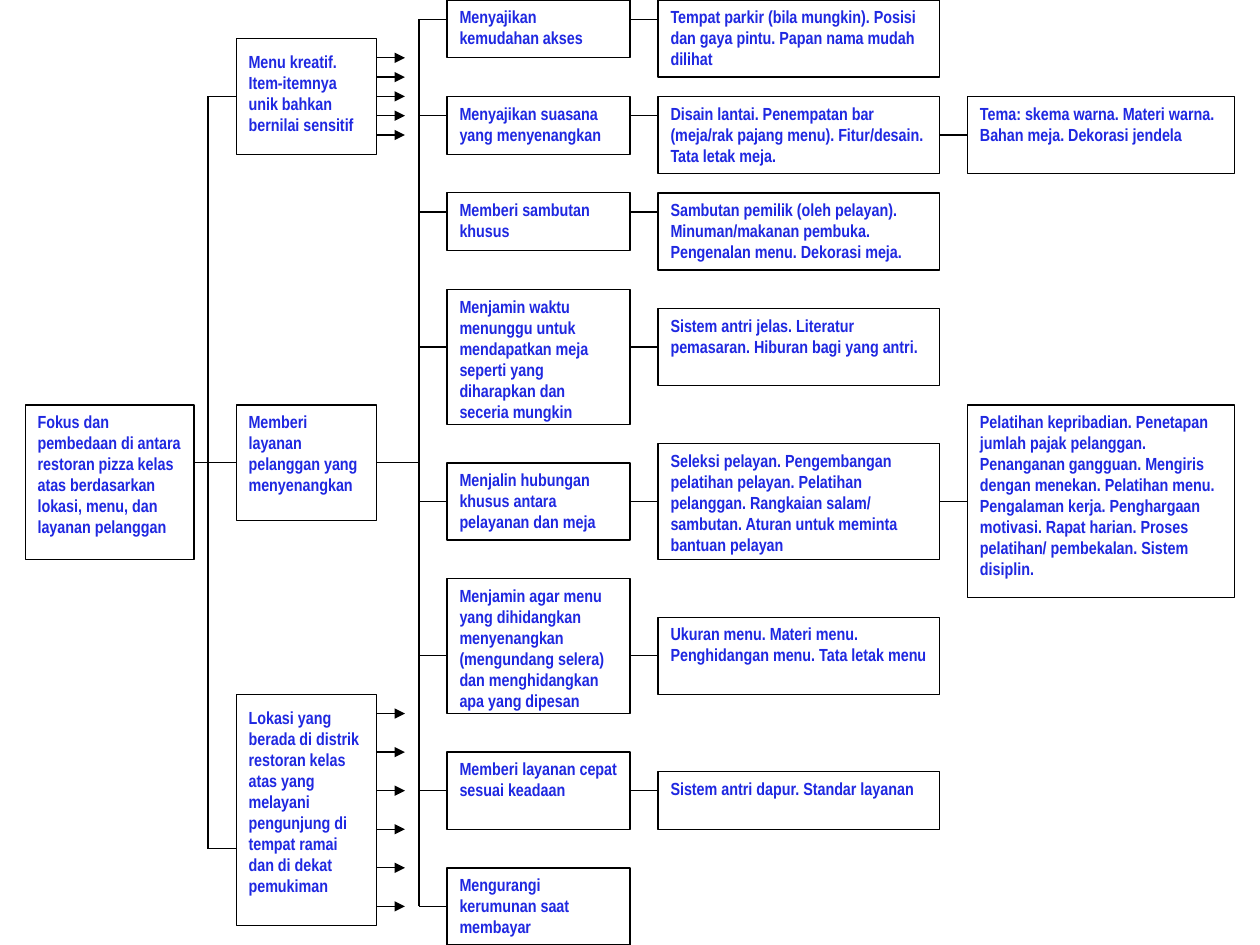
from lxml.etree import SubElement
from pptx import Presentation
from pptx.dml.color import RGBColor
from pptx.enum.shapes import MSO_CONNECTOR, MSO_SHAPE
from pptx.enum.text import MSO_ANCHOR, PP_ALIGN
from pptx.oxml.ns import qn
from pptx.util import Inches, Pt

COLORS = {"paper": "FFFFFF", "ink": "000000", "text": "1F28E1"}
FONT = "Arial Narrow"

# The chart stands on a grid of 86 columns and 49 rows.
LEFT, COLUMN, ROW = 0.2, 9.6 / 86, 7.5 / 49

# Left column and width of each level, in grid columns
FOCUS, PILLAR, SERVICE, DETAIL, EXTRA = (0, 12), (15, 10), (30, 13), (45, 20), (67, 19)
FOCUS_SPINE, SERVICE_SPINE, ARROW_END = 13, 28, 27
MIDDLE_ROW = 24

# Top row, rows, text, inset above the text, rows of the arrows
PILLARS = [
    (2, 6, "Menu kreatif. Item-itemnya unik bahkan bernilai sensitif", 0.1, range(3, 8)),
    (21, 6, "Memberi layanan pelanggan yang menyenangkan", 0.05, ()),
    (36, 12, "Lokasi yang berada di distrik restoran kelas atas yang melayani "
     "pengunjung di tempat ramai dan di dekat pemukiman", 0.1, range(37, 48, 2)),
]

# Row of the link, then top row, rows and text of the service and of its detail
SERVICES = [
    (1, (0, 3, "Menyajikan kemudahan akses"),
     (0, 4, "Tempat parkir (bila mungkin). Posisi dan gaya pintu. Papan nama mudah dilihat")),
    (6, (5, 3, "Menyajikan suasana yang menyenangkan"),
     (5, 4, "Disain lantai. Penempatan bar (meja/rak pajang menu). Fitur/desain. "
      "Tata letak meja.")),
    (11, (10, 3, "Memberi sambutan khusus"),
     (10, 4, "Sambutan pemilik (oleh pelayan). Minuman/makanan pembuka. "
      "Pengenalan menu. Dekorasi meja.")),
    (18, (15, 7, "Menjamin waktu menunggu untuk mendapatkan meja seperti yang "
          "diharapkan dan seceria mungkin"),
     (16, 4, "Sistem antri jelas. Literatur pemasaran. Hiburan bagi yang antri.")),
    (26, (24, 4, "Menjalin hubungan khusus antara pelayanan dan meja"),
     (23, 6, "Seleksi pelayan. Pengembangan pelatihan pelayan. Pelatihan pelanggan. "
      "Rangkaian salam/ sambutan. Aturan untuk meminta bantuan pelayan")),
    (34, (30, 7, "Menjamin agar menu yang dihidangkan menyenangkan (mengundang selera) "
          "dan menghidangkan apa yang dipesan"),
     (32, 4, "Ukuran menu. Materi menu. Penghidangan menu. Tata letak menu")),
    (41, (39, 4, "Memberi layanan cepat sesuai keadaan"),
     (40, 3, "Sistem antri dapur. Standar layanan")),
    (47, (45, 4, "Mengurangi kerumunan saat membayar"), None),
]

EXTRAS = [
    (7, (5, 4, "Tema: skema warna. Materi warna. Bahan meja. Dekorasi jendela")),
    (26, (21, 10, "Pelatihan kepribadian. Penetapan jumlah pajak pelanggan. "
          "Penanganan gangguan. Mengiris dengan menekan. Pelatihan menu. "
          "Pengalaman kerja. Penghargaan motivasi. Rapat harian. "
          "Proses pelatihan/ pembekalan. Sistem disiplin.")),
]


def color(name):
    return RGBColor.from_string(COLORS[name])


def across(column):
    return Inches(LEFT + column * COLUMN)


def down(row):
    return Inches(row * ROW)


def right_edge(level):
    return sum(level)


def add_box(page, level, top, rows, text, inset=0.05):
    column, columns = level
    box = page.shapes.add_shape(MSO_SHAPE.RECTANGLE, across(column), down(top),
                                Inches(columns * COLUMN), down(rows))
    box.shadow.inherit = False
    box.fill.solid()
    box.fill.fore_color.rgb = color("paper")
    box.line.color.rgb = color("ink")
    box.line.width = Pt(0.75)
    frame = box.text_frame
    frame.word_wrap = True
    frame.vertical_anchor = MSO_ANCHOR.TOP
    frame.margin_left = frame.margin_right = Inches(0.1)
    frame.margin_top = frame.margin_bottom = Inches(inset)
    para = frame.paragraphs[0]
    para.text = text
    para.alignment = PP_ALIGN.LEFT
    para.font.name = FONT
    para.font.size = Pt(10)
    para.font.bold = True
    para.font.color.rgb = color("text")


def add_line(page, start, end, arrow=False):
    """Join two (column, row) points of the grid."""
    line = page.shapes.add_connector(MSO_CONNECTOR.STRAIGHT, across(start[0]), down(start[1]),
                                     across(end[0]), down(end[1]))
    line.line.color.rgb = color("ink")
    line.line.width = Pt(0.75)
    if arrow:
        SubElement(line.line._get_or_add_ln(), qn("a:tailEnd"), type="triangle")
    SubElement(line._element.spPr, qn("a:effectLst"))


def add_link(page, start_column, end_column, row, arrow=False):
    add_line(page, (start_column, row), (end_column, row), arrow)


def add_focus(page):
    add_box(page, FOCUS, 21, 8, "Fokus dan pembedaan di antara restoran pizza kelas atas "
            "berdasarkan lokasi, menu, dan layanan pelanggan")
    add_link(page, right_edge(FOCUS), PILLAR[0], MIDDLE_ROW)


def add_pillars(page):
    first, last = 5, 44
    add_line(page, (FOCUS_SPINE, first), (FOCUS_SPINE, last))
    for row in (first, last):
        add_link(page, FOCUS_SPINE, PILLAR[0], row)
    for top, rows, text, inset, arrow_rows in PILLARS:
        add_box(page, PILLAR, top, rows, text, inset)
        for row in arrow_rows:
            add_link(page, right_edge(PILLAR), ARROW_END, row, arrow=True)
    add_link(page, right_edge(PILLAR), SERVICE_SPINE, MIDDLE_ROW)


def add_services(page):
    add_line(page, (SERVICE_SPINE, SERVICES[0][0]), (SERVICE_SPINE, SERVICES[-1][0]))
    for row, service, detail in SERVICES:
        add_link(page, SERVICE_SPINE, SERVICE[0], row)
        add_box(page, SERVICE, *service)
        if detail:
            add_link(page, right_edge(SERVICE), DETAIL[0], row)
            add_box(page, DETAIL, *detail)


def add_extras(page):
    for row, extra in EXTRAS:
        add_link(page, right_edge(DETAIL), EXTRA[0], row)
        add_box(page, EXTRA, *extra)


def main():
    deck = Presentation()
    deck.slide_width, deck.slide_height = Inches(10), Inches(7.5)
    page = deck.slides.add_slide(deck.slide_layouts[6])
    add_focus(page)
    add_pillars(page)
    add_services(page)
    add_extras(page)
    deck.save("out.pptx")


if __name__ == "__main__":
    main()
